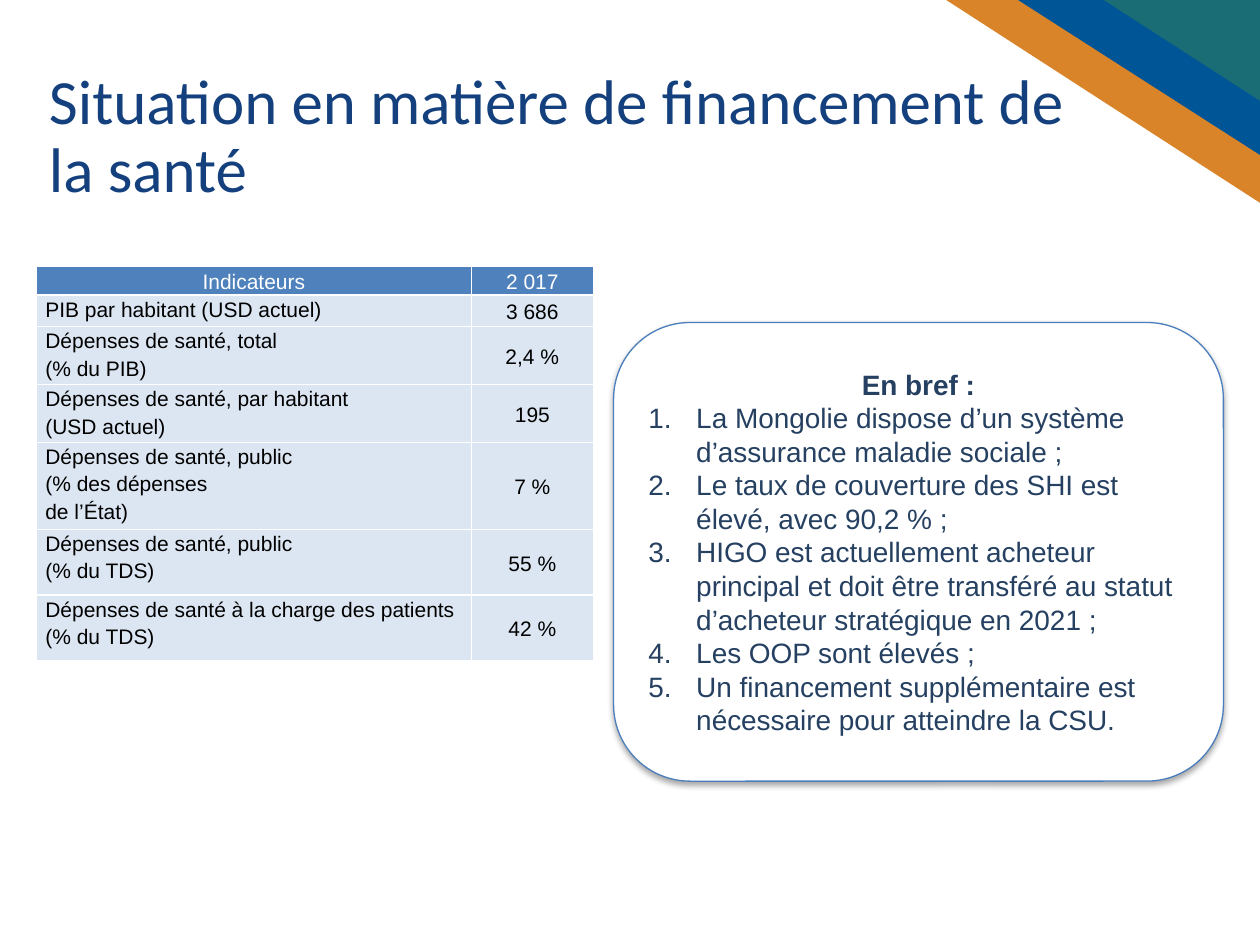
from dataclasses import dataclass

from lxml.etree import SubElement
from pptx import Presentation
from pptx.dml.color import RGBColor
from pptx.enum.shapes import MSO_SHAPE
from pptx.enum.text import MSO_ANCHOR, PP_ALIGN
from pptx.oxml.ns import qn
from pptx.util import Inches, Pt

COLORS = {
    "orange": "D98429", "blue": "005596", "teal": "1B6D75",
    "title": "14417E", "header": "4F81BD", "row": "DCE6F2",
    "white": "FFFFFF", "black": "000000", "outline": "4B7EBC", "navy": "254061",
}


@dataclass
class Corner:
    width: float
    height: float
    color: str


@dataclass
class Indicator:
    label: tuple[str, ...]
    value: str
    height: float
    align: PP_ALIGN = PP_ALIGN.JUSTIFY


CORNERS = [
    Corner(2.49, 1.61, "orange"),
    Corner(1.92, 1.23, "blue"),
    Corner(1.24, 0.8, "teal"),
]
INDICATORS = [
    Indicator(("Indicateurs",), "2 017", 0.21, PP_ALIGN.CENTER),
    Indicator(("PIB par habitant (USD actuel)",), "3 686", 0.25),
    Indicator(("Dépenses de santé, total", "(% du PIB)"), "2,4 %", 0.43),
    Indicator(("Dépenses de santé, par habitant", "(USD actuel)"), "195", 0.43),
    Indicator(("Dépenses de santé, public", "(% des dépenses", "de l’État)"), "7 %", 0.64),
    Indicator(("Dépenses de santé, public", "(% du TDS)"), "55 %", 0.52),
    Indicator(("Dépenses de santé à la charge des patients (% du TDS)",), "42 %", 0.52,
              PP_ALIGN.LEFT),
]
POINTS = [
    "La Mongolie dispose d’un système d’assurance maladie sociale ;",
    "Le taux de couverture des SHI est élevé, avec 90,2 % ;",
    "HIGO est actuellement acheteur principal et doit être transféré au statut "
    "d’acheteur stratégique en 2021 ;",
    "Les OOP sont élevés ;",
    "Un financement supplémentaire est nécessaire pour atteindre la CSU.",
]


def rgb(color: str) -> RGBColor:
    return RGBColor.from_string(COLORS[color])


def apply(obj, fmt: dict) -> None:
    for name, value in fmt.items():
        setattr(obj, name, value)


def fill(obj, color: str) -> None:
    obj.fill.solid()
    obj.fill.fore_color.rgb = rgb(color)


def write(p, text: str, color: str, font: dict, **fmt) -> None:
    apply(p, fmt)
    r = p.add_run()
    r.text = text
    apply(r.font, font)
    r.font.color.rgb = rgb(color)


def paragraph(tf, index: int):
    return tf.add_paragraph() if index else tf.paragraphs[0]


def add_corner(s, corner: Corner) -> None:
    sp = s.shapes.add_shape(MSO_SHAPE.RIGHT_TRIANGLE, Inches(10 - corner.width), 0,
                            Inches(corner.width), Inches(corner.height))
    sp.rotation = 180
    sp.shadow.inherit = False
    fill(sp, corner.color)
    sp.line.fill.background()


def add_title(s) -> None:
    tf = s.shapes.add_textbox(Inches(0.29), Inches(0.47), Inches(8.27), Inches(1.25)).text_frame
    apply(tf, {"word_wrap": True, "vertical_anchor": MSO_ANCHOR.MIDDLE})
    write(tf.paragraphs[0], "Situation en matière de financement de la santé", "title",
          {"name": "Calibri", "size": Pt(36)}, line_spacing=0.9)


def add_borders(cell) -> None:
    tc_pr = cell._tc.get_or_add_tcPr()
    for side in "LRTB":
        ln = SubElement(tc_pr, qn(f"a:ln{side}"), w=str(Pt(1)))
        SubElement(SubElement(ln, qn("a:solidFill")), qn("a:srgbClr"), val=COLORS["white"])


def fill_cell(cell, lines: tuple[str, ...], align: PP_ALIGN, anchor: MSO_ANCHOR,
              header: bool) -> None:
    apply(cell, {"margin_left": Inches(0.07), "margin_right": Inches(0.07),
                 "margin_top": 0, "margin_bottom": 0, "vertical_anchor": anchor})
    add_borders(cell)
    fill(cell, "header" if header else "row")
    for i, line in enumerate(lines):
        write(paragraph(cell.text_frame, i), line, "white" if header else "black",
              {"name": "Arial", "size": Pt(12), "bold": False},
              alignment=align, line_spacing=1.15)


def add_indicators(s, rows: list[Indicator]) -> None:
    height = sum(row.height for row in rows)
    table = s.shapes.add_table(len(rows), 2, Inches(0.29), Inches(2.11),
                               Inches(4.42), Inches(height)).table
    for column, width in zip(table.columns, (3.45, 0.97)):
        column.width = Inches(width)
    for i, row in enumerate(rows):
        table.rows[i].height = Inches(row.height)
        anchor = MSO_ANCHOR.TOP if i else MSO_ANCHOR.MIDDLE
        fill_cell(table.cell(i, 0), row.label, row.align, anchor, i == 0)
        fill_cell(table.cell(i, 1), (row.value,), PP_ALIGN.CENTER, MSO_ANCHOR.MIDDLE, i == 0)


def add_shadow(sp) -> None:
    sp.shadow.inherit = False
    effects = sp._element.spPr.find(qn("a:effectLst"))
    shadow = SubElement(effects, qn("a:outerShdw"), blurRad=str(Pt(3.1)), dist=str(Pt(1.8)),
                        dir="5400000", rotWithShape="0")
    color = SubElement(shadow, qn("a:srgbClr"), val=COLORS["black"])
    SubElement(color, qn("a:alpha"), val="35000")


def add_summary(s, points: list[str]) -> None:
    sp = s.shapes.add_shape(MSO_SHAPE.ROUNDED_RECTANGLE, Inches(4.87), Inches(2.56),
                            Inches(4.84), Inches(3.64))
    fill(sp, "white")
    sp.line.color.rgb = rgb("outline")
    sp.line.width = Pt(0.75)
    add_shadow(sp)
    tf = sp.text_frame
    apply(tf, {"word_wrap": True, "vertical_anchor": MSO_ANCHOR.MIDDLE})
    font = {"name": "Arial", "size": Pt(16)}
    write(tf.paragraphs[0], "En bref :", "navy", font | {"bold": True},
          alignment=PP_ALIGN.CENTER)
    for point in points:
        p = tf.add_paragraph()
        p_pr = p._p.get_or_add_pPr()
        p_pr.set("marL", str(Inches(0.38)))
        p_pr.set("indent", str(-Inches(0.38)))
        SubElement(p_pr, qn("a:buFont"), typeface="+mj-lt")
        SubElement(p_pr, qn("a:buAutoNum"), type="arabicPeriod")
        write(p, point, "navy", font, alignment=PP_ALIGN.LEFT)


def main() -> None:
    prs = Presentation()
    apply(prs, {"slide_width": Inches(10), "slide_height": Inches(7.5)})
    s = prs.slides.add_slide(prs.slide_layouts[6])
    for corner in CORNERS:
        add_corner(s, corner)
    add_title(s)
    add_indicators(s, INDICATORS)
    add_summary(s, POINTS)
    prs.save("out.pptx")


if __name__ == "__main__":
    main()
